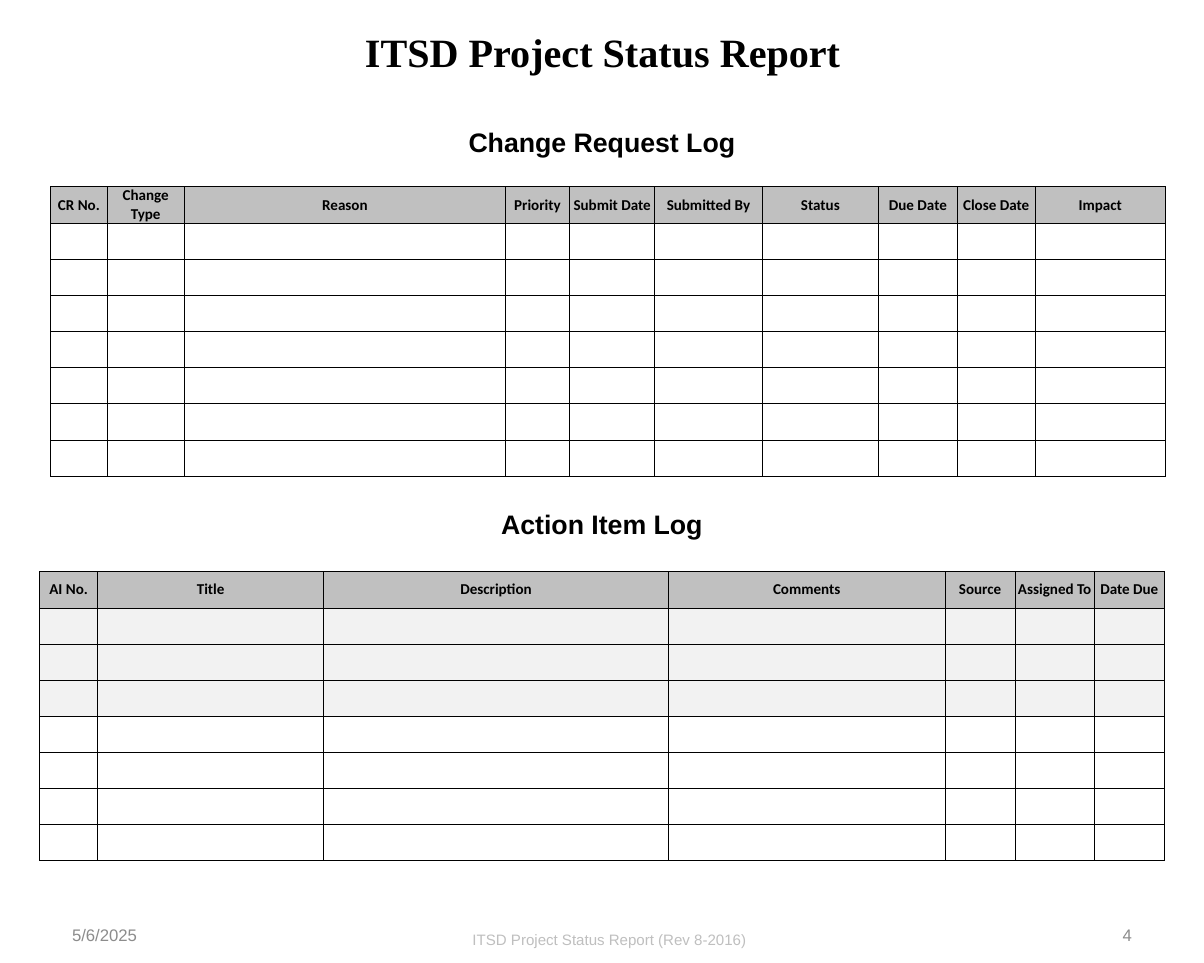
from lxml import etree
from pptx import Presentation
from pptx.dml.color import RGBColor
from pptx.enum.text import MSO_ANCHOR, PP_ALIGN
from pptx.oxml import parse_xml
from pptx.oxml.ns import nsdecls
from pptx.util import Inches, Pt

COLORS = {
    "text": "000000",
    "border": "000000",
    "header": "C0C0C0",
    "shaded": "F2F2F2",
    "date": "8C8C8C",
    "footer": "BFBFBF",
}
ROW_COUNT = 8
ROW_HEIGHT = 0.3


def write_text(shape, text, font_name, size, color, bold=False, align=PP_ALIGN.CENTER):
    """Fill a shape or table cell with one formatted paragraph and return it."""
    paragraph = shape.text_frame.paragraphs[0]
    if text:
        paragraph.text = text
    paragraph.alignment = align
    paragraph.font.name = font_name
    paragraph.font.size = Pt(size)
    paragraph.font.bold = bold
    paragraph.font.color.rgb = RGBColor.from_string(COLORS[color])
    return paragraph


def add_log_table(slide, left, top, columns, shaded_rows):
    """Add a bordered log with a header row; columns are (heading, width) pairs."""
    total_width = sum(width for _, width in columns)
    table = slide.shapes.add_table(
        ROW_COUNT, len(columns), Inches(left), Inches(top),
        Inches(total_width), Inches(ROW_COUNT * ROW_HEIGHT)).table
    table.first_row = False
    table.horz_banding = False
    for row in table.rows:
        row.height = Inches(ROW_HEIGHT)
    for column_index, (heading, width) in enumerate(columns):
        table.columns[column_index].width = Inches(width)
        for row_index in range(ROW_COUNT):
            cell = table.cell(row_index, column_index)
            cell.margin_left = cell.margin_right = 0
            cell.margin_top = cell.margin_bottom = 0
            cell.vertical_anchor = MSO_ANCHOR.MIDDLE
            properties = cell._tc.get_or_add_tcPr()
            for side in ("lnL", "lnR", "lnT", "lnB"):
                properties.append(parse_xml(
                    f'<a:{side} {nsdecls("a")} w="{Pt(0.5)}"><a:solidFill>'
                    f'<a:srgbClr val="{COLORS["border"]}"/></a:solidFill></a:{side}>'))
            if row_index <= shaded_rows:
                cell.fill.solid()
                fill_name = "shaded" if row_index else "header"
                cell.fill.fore_color.rgb = RGBColor.from_string(COLORS[fill_name])
            else:
                cell.fill.background()
            text = "" if row_index else heading
            paragraph = write_text(cell, text, "Calibri", 9, "text", bold=True)
            if not text:
                # An empty cell takes its line height from the end mark.
                end_mark = etree.SubElement(
                    paragraph._p, paragraph._p.tag[:-1] + "endParaRPr")
                end_mark.set("sz", "900")


presentation = Presentation()
presentation.slide_width = Inches(10)
presentation.slide_height = Inches(8)
slide = presentation.slides.add_slide(presentation.slide_layouts[5])

title = slide.shapes.title
title.left, title.top = Inches(1.42), Inches(0.17)
title.width, title.height = Inches(7.17), Inches(0.51)
write_text(title, "ITSD Project Status Report", "Times New Roman", 24, "text", bold=True)

change_columns = [
    ("CR No.", 0.47), ("Change Type", 0.64), ("Reason", 2.67), ("Priority", 0.53),
    ("Submit Date", 0.71), ("Submitted By", 0.89), ("Status", 0.97),
    ("Due Date", 0.65), ("Close Date", 0.65), ("Impact", 1.08),
]
action_columns = [
    ("AI No.", 0.48), ("Title", 1.88), ("Description", 2.86), ("Comments", 2.3),
    ("Source", 0.58), ("Assigned To", 0.66), ("Date Due", 0.58),
]
add_log_table(slide, 0.42, 1.55, change_columns, shaded_rows=0)
add_log_table(slide, 0.33, 4.75, action_columns, shaded_rows=3)

for heading, top in (("Change Request Log", 1), ("Action Item Log", 4.17)):
    heading_box = slide.shapes.add_textbox(
        Inches(2.5), Inches(top), Inches(5), Inches(0.37))
    heading_box.text_frame.word_wrap = True
    write_text(heading_box, heading, "Arial", 16, "text", bold=True)

for text, left, align in (("5/6/2025", 0.5, PP_ALIGN.LEFT), ("4", 7.17, PP_ALIGN.RIGHT)):
    corner_box = slide.shapes.add_textbox(
        Inches(left), Inches(7.57), Inches(2.33), Inches(0.43))
    corner_box.text_frame.word_wrap = True
    corner_box.text_frame.vertical_anchor = MSO_ANCHOR.MIDDLE
    write_text(corner_box, text, "Arial", 10, "date", align=align).line_spacing = 0.8

footer_box = slide.shapes.add_textbox(
    Inches(3.7), Inches(7.68), Inches(2.72), Inches(0.25))
footer_box.text_frame.word_wrap = True
write_text(footer_box, "ITSD Project Status Report (Rev 8-2016)", "Arial", 9, "footer")

presentation.save("out.pptx")
